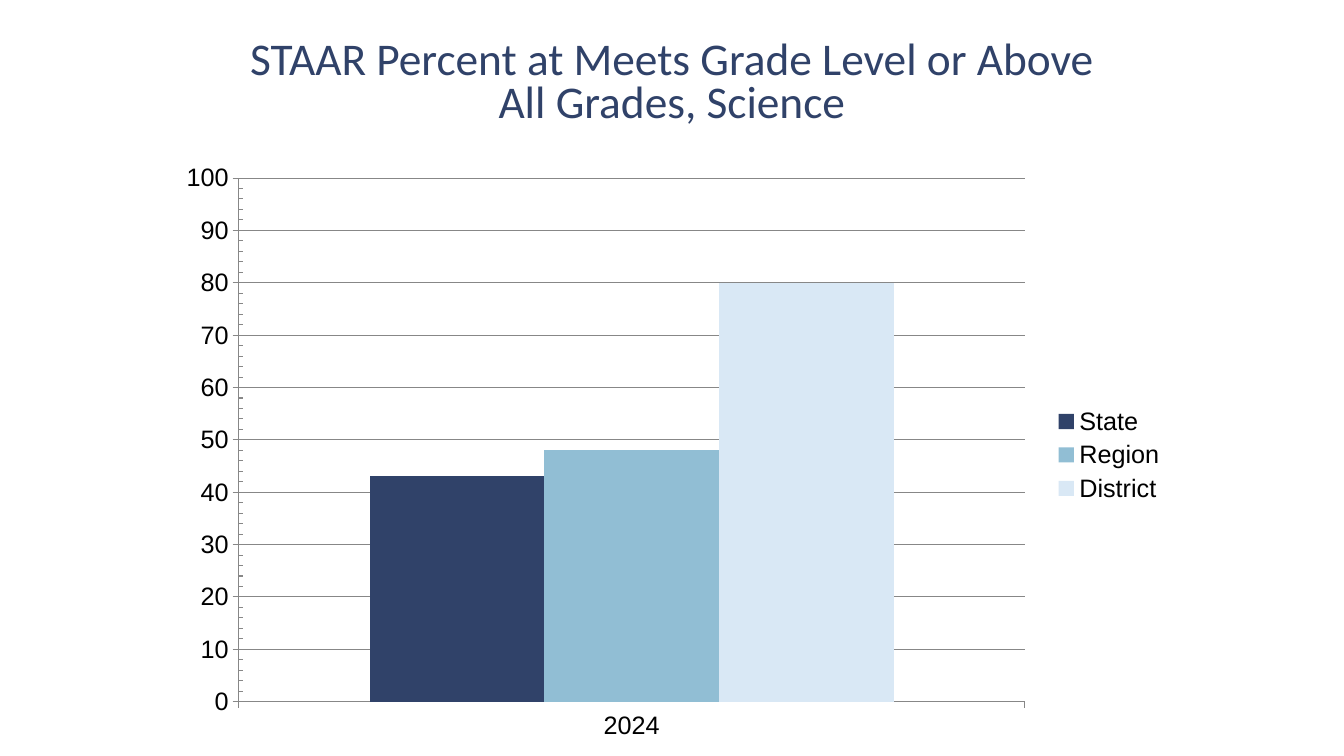
from lxml import etree
from pptx import Presentation
from pptx.chart.data import CategoryChartData as Data
from pptx.dml.color import RGBColor
from pptx.enum.chart import XL_CHART_TYPE as Kind, XL_LEGEND_POSITION as Side, XL_TICK_MARK as Tick
from pptx.enum.text import MSO_ANCHOR as Anchor, PP_ALIGN as Align
from pptx.util import Pt


def paint(part, shade):
    part.solid()
    part.fore_color.rgb = RGBColor.from_string(shade)


deck = Presentation()
deck.slide_width, deck.slide_height = Pt(960), Pt(540)
slide = deck.slides.add_slide(deck.slide_layouts[6])
paint(slide.background.fill, "FFFFFF")

# Chart data and type
scores = [("State", 43, "304269"), ("Region", 48, "91BED4"), ("District", 80, "D9E8F5")]
data = Data()
data.categories = ["2024"]
for name, score, shade in scores:
    data.add_series(name, [score])
chart = slide.shapes.add_chart(
    Kind.COLUMN_CLUSTERED, Pt(120), Pt(110), Pt(720), Pt(430), data).chart
chart.has_title = False
chart.font.name, chart.font.size = "Arial", Pt(18)
paint(chart.font.fill, "000000")

# Bars
plot = chart.plots[0]
plot.gap_width, plot.overlap = 150, 0
plot.vary_by_categories = False
for bar, (name, score, shade) in zip(plot.series, scores):
    paint(bar.format.fill, shade)
    bar.format.line.fill.background()

# Axes and grid
years, marks = chart.category_axis, chart.value_axis
marks.minimum_scale, marks.maximum_scale = 0, 100
marks.major_unit, marks.minor_unit = 10, 2
marks.minor_tick_mark = Tick.INSIDE
marks.has_major_gridlines = True
for axis in (years, marks):
    axis.major_tick_mark = Tick.OUTSIDE
for item in (years, marks, marks.major_gridlines):
    paint(item.format.line.fill, "878787")
    item.format.line.width = Pt(0.75)

# Legend
chart.has_legend = True
chart.legend.position = Side.RIGHT
chart.legend.include_in_layout = False

# Plot area, as shares of the chart
area = plot._element.getparent()
ns = area.nsmap["c"]
for old in area.findall(f"{{{ns}}}layout"):
    area.remove(old)
layout = etree.Element(f"{{{ns}}}layout")
area.insert(0, layout)
manual = etree.SubElement(layout, f"{{{ns}}}manualLayout")
for tag, val in [("layoutTarget", "inner"), ("xMode", "edge"), ("yMode", "edge"),
                 ("x", "0.07"), ("y", "0.04"), ("w", "0.78"), ("h", "0.87")]:
    etree.SubElement(manual, f"{{{ns}}}{tag}", val=val)

# Title
frame = slide.shapes.add_textbox(Pt(120), Pt(24), Pt(720), Pt(72)).text_frame
frame.word_wrap = True
frame.vertical_anchor = Anchor.MIDDLE
for i, line in enumerate(["STAAR Percent at Meets Grade Level or Above", "All Grades, Science"]):
    para = frame.add_paragraph() if i else frame.paragraphs[0]
    para.alignment, para.line_spacing = Align.CENTER, 0.8
    run = para.add_run()
    run.text = line
    run.font.name, run.font.size = "Calibri", Pt(32.4)
    paint(run.font.fill, "304269")

deck.save("out.pptx")
